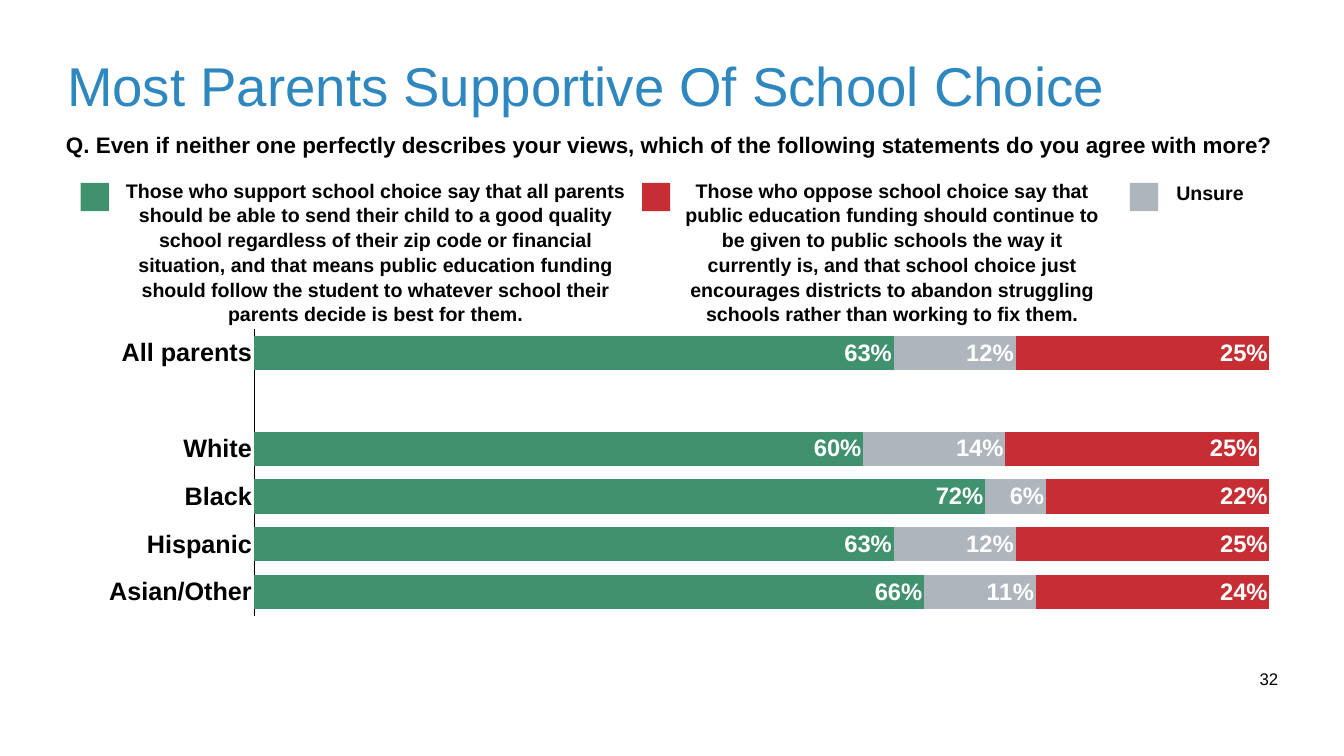
"""Build the slide on parents' support for school choice, with a stacked bar chart."""
from lxml import etree
from pptx import Presentation
from pptx.chart.data import CategoryChartData
from pptx.dml.color import RGBColor
from pptx.enum.chart import XL_CHART_TYPE, XL_LABEL_POSITION, XL_TICK_LABEL_POSITION, XL_TICK_MARK
from pptx.enum.shapes import MSO_SHAPE
from pptx.enum.text import MSO_ANCHOR, PP_ALIGN
from pptx.oxml.ns import qn
from pptx.util import Inches, Pt

BLUE = RGBColor(0x2E, 0x88, 0xBF)
GREEN = RGBColor(0x40, 0x91, 0x6E)
RED = RGBColor(0xC6, 0x2E, 0x33)
GRAY = RGBColor(0xAE, 0xB5, 0xBC)
BLACK = RGBColor(0, 0, 0)
WHITE = RGBColor(255, 255, 255)


def set_font(font, size, color, bold):
    font.name = "Arial"
    font.size = Pt(size)
    font.color.rgb = color
    font.bold = bold


def fill_text(box, text, size, color=BLACK, bold=True, align=PP_ALIGN.LEFT, wrap=True):
    frame = box.text_frame
    frame.text = text
    frame.word_wrap = wrap
    frame.vertical_anchor = MSO_ANCHOR.TOP
    frame.margin_left = frame.margin_right = Inches(0.08)
    frame.margin_top = frame.margin_bottom = Inches(0.08)
    paragraph = frame.paragraphs[0]
    paragraph.alignment = align
    set_font(paragraph.font, size, color, bold)
    return paragraph


deck = Presentation()
deck.slide_width, deck.slide_height = Inches(26.67), Inches(15)
page = deck.slides.add_slide(deck.slide_layouts[5])

title = page.shapes.title
title.left, title.top = Inches(1.25), Inches(0.84)
title.width, title.height = Inches(24.17), Inches(2.08)
fill_text(title, "Most Parents Supportive Of School Choice", 78, BLUE, False)
title.text_frame.margin_top = Inches(0.18)

page_number = page.shapes.add_textbox(Inches(24.91), Inches(13.19), Inches(0.54), Inches(0.56))
fill_text(page_number, "32", 24, bold=False, align=PP_ALIGN.CENTER, wrap=False)

question = page.shapes.add_textbox(Inches(1.23), Inches(2.53), Inches(24.17), Inches(1.18))
fill_text(question, "Q. Even if neither one perfectly describes your views, "
          "which of the following statements do you agree with more?", 32)

chart_data = CategoryChartData()
chart_data.categories = ["All parents", "", "White", "Black", "Hispanic", "Asian/Other"]
chart_data.add_series("Series 1", [0.63, None, 0.60, 0.72, 0.63, 0.66])
chart_data.add_series("Series 2", [0.12, None, 0.14, 0.06, 0.12, 0.11])
chart_data.add_series("Series 3", [0.25, None, 0.25, 0.22, 0.25, 0.24])
chart = page.shapes.add_chart(XL_CHART_TYPE.BAR_STACKED, Inches(1.32), Inches(5.95),
                              Inches(23.99), Inches(6.62), chart_data).chart
set_font(chart.font, 10, BLACK, False)
chart.has_title = False
chart.has_legend = False

category_axis = chart.category_axis
category_axis.reverse_order = True
category_axis.major_tick_mark = XL_TICK_MARK.NONE
category_axis.format.line.color.rgb = BLACK
category_axis.format.line.width = Pt(1)
set_font(category_axis.tick_labels.font, 36, BLACK, True)

value_axis = chart.value_axis
value_axis.minimum_scale, value_axis.maximum_scale = 0, 1
value_axis.major_unit = 0.25
value_axis.has_major_gridlines = False
value_axis.major_tick_mark = XL_TICK_MARK.NONE
value_axis.tick_label_position = XL_TICK_LABEL_POSITION.NONE
value_axis.format.line.fill.background()

plot = chart.plots[0]
plot.gap_width = 40
plot.overlap = 100
plot.vary_by_categories = False
for series, color in zip(plot.series, (GREEN, GRAY, RED)):
    series.format.fill.solid()
    series.format.fill.fore_color.rgb = color
    labels = series.data_labels
    labels.show_value = True
    labels.position = XL_LABEL_POSITION.INSIDE_END
    labels.number_format = "#,##0%"
    labels.number_format_is_linked = False
    set_font(labels.font, 34, WHITE, True)

plot_area = chart._chartSpace.find(".//" + qn("c:plotArea"))
for old_layout in plot_area.findall(qn("c:layout")):
    plot_area.remove(old_layout)
layout = etree.Element(qn("c:layout"))
manual_layout = etree.SubElement(layout, qn("c:manualLayout"))
for tag, value in (("layoutTarget", "inner"), ("xMode", "edge"), ("yMode", "edge"),
                   ("x", "0.155"), ("y", "0.088"), ("w", "0.84"), ("h", "0.86")):
    etree.SubElement(manual_layout, qn("c:" + tag)).set("val", value)
plot_area.insert(0, layout)

legend = [
    (GREEN, 1.6, 2.23, 3.44, 10.44, 2.91,
     "Those who support school choice say that all parents should be able to send their child "
     "to a good quality school regardless of their zip code or financial situation, and that "
     "means public education funding should follow the student to whatever school their "
     "parents decide is best for them."),
    (RED, 12.74, 13.39, 3.44, 8.62, 2.91,
     "Those who oppose school choice say that public education funding should continue to be "
     "given to public schools the way it currently is, and that school choice just encourages "
     "districts to abandon struggling schools rather than working to fix them."),
    (GRAY, 22.42, 21.5, 3.49, 5.02, 0.61, "Unsure"),
]
for color, key_left, left, top, width, height, statement in legend:
    box = page.shapes.add_textbox(Inches(left), Inches(top), Inches(width), Inches(height))
    paragraph = fill_text(box, statement, 28, align=PP_ALIGN.CENTER)
    paragraph.line_spacing = 1.05
    key = page.shapes.add_shape(MSO_SHAPE.RECTANGLE, Inches(key_left), Inches(3.63),
                                Inches(0.56), Inches(0.56))
    key.shadow.inherit = False
    key.fill.solid()
    key.fill.fore_color.rgb = color
    key.line.fill.background()

deck.save("out.pptx")
